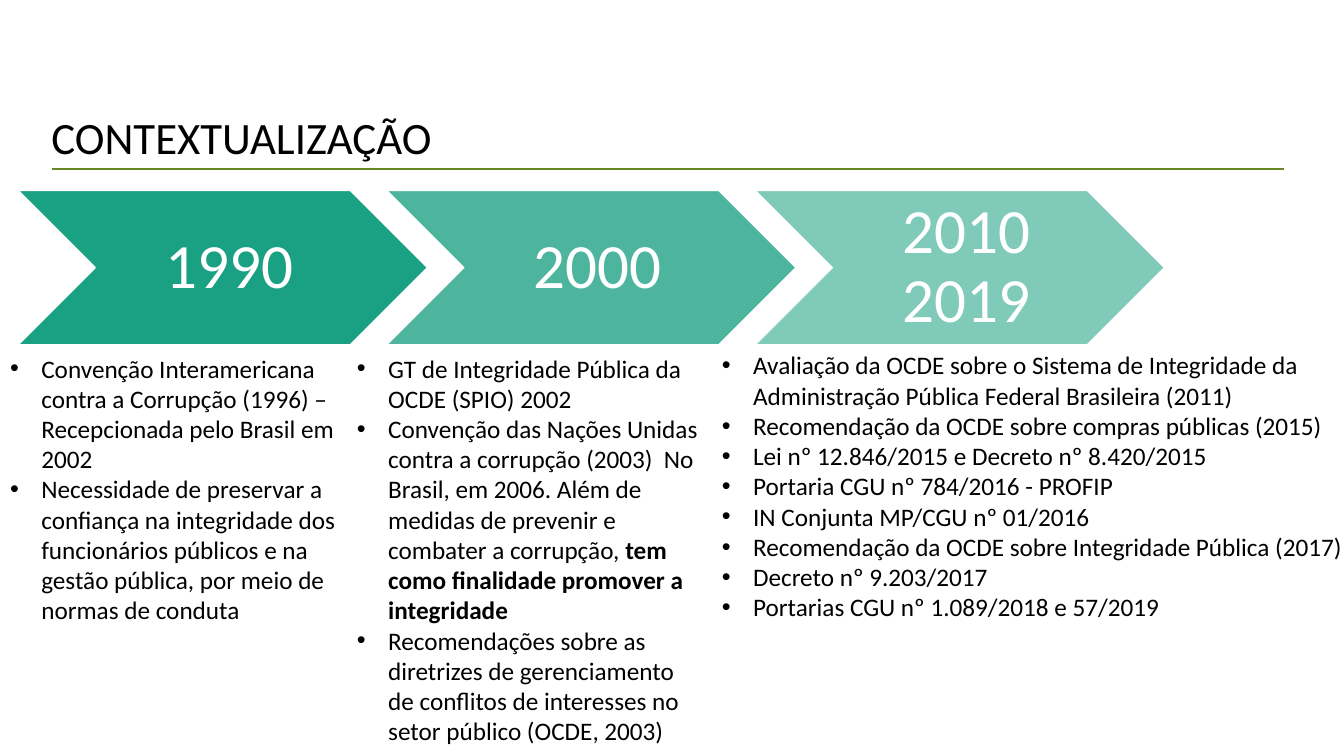
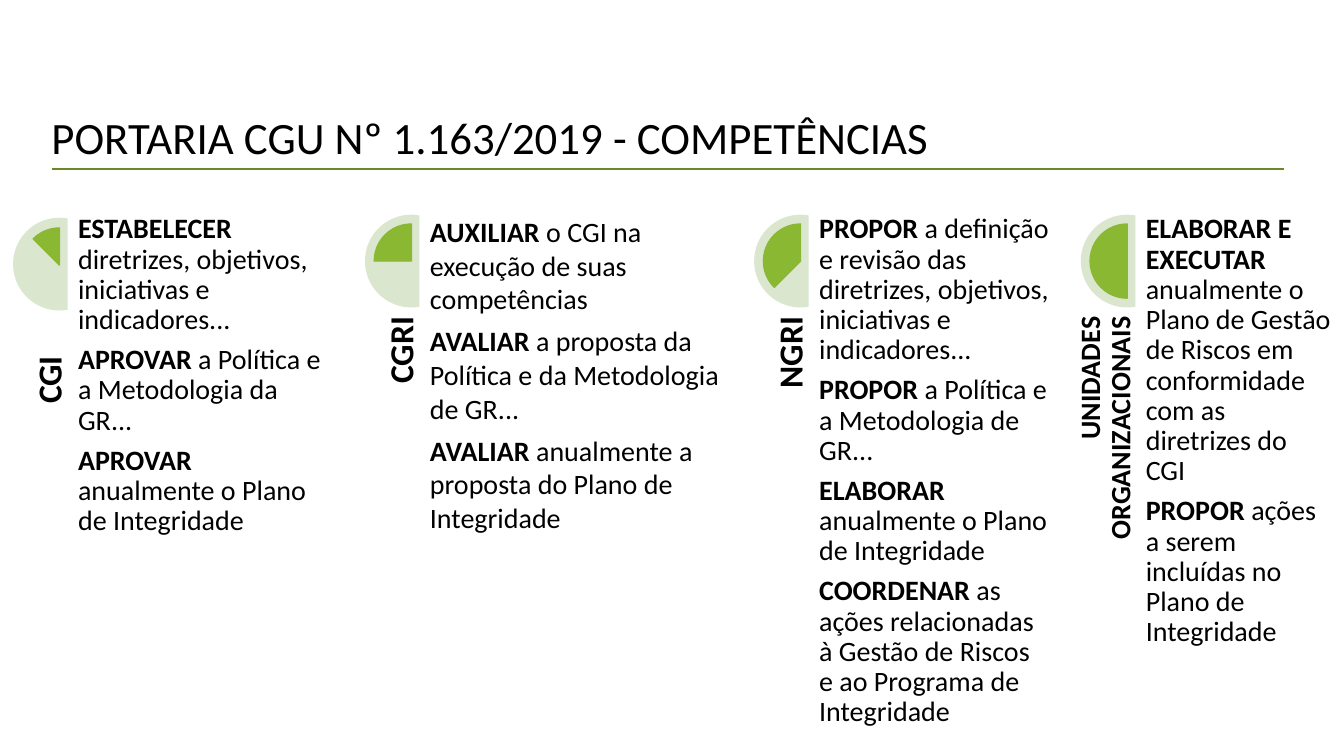
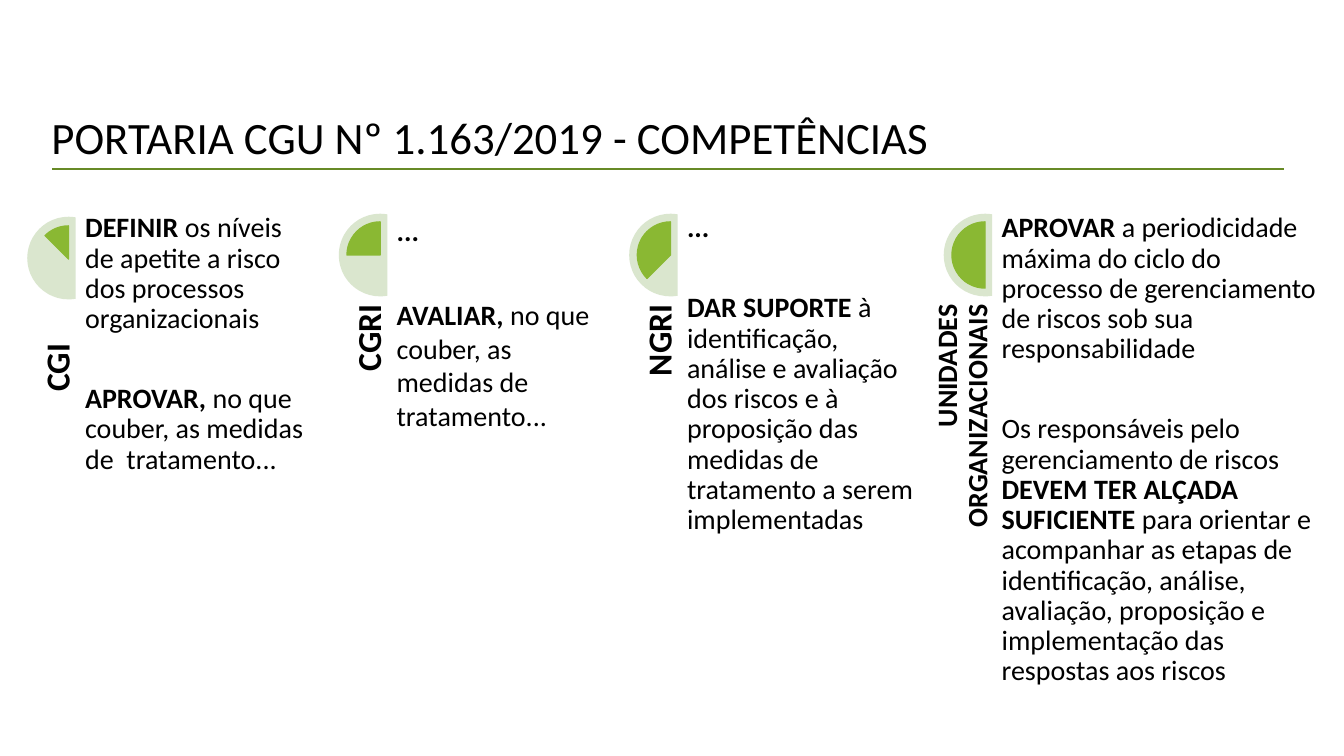
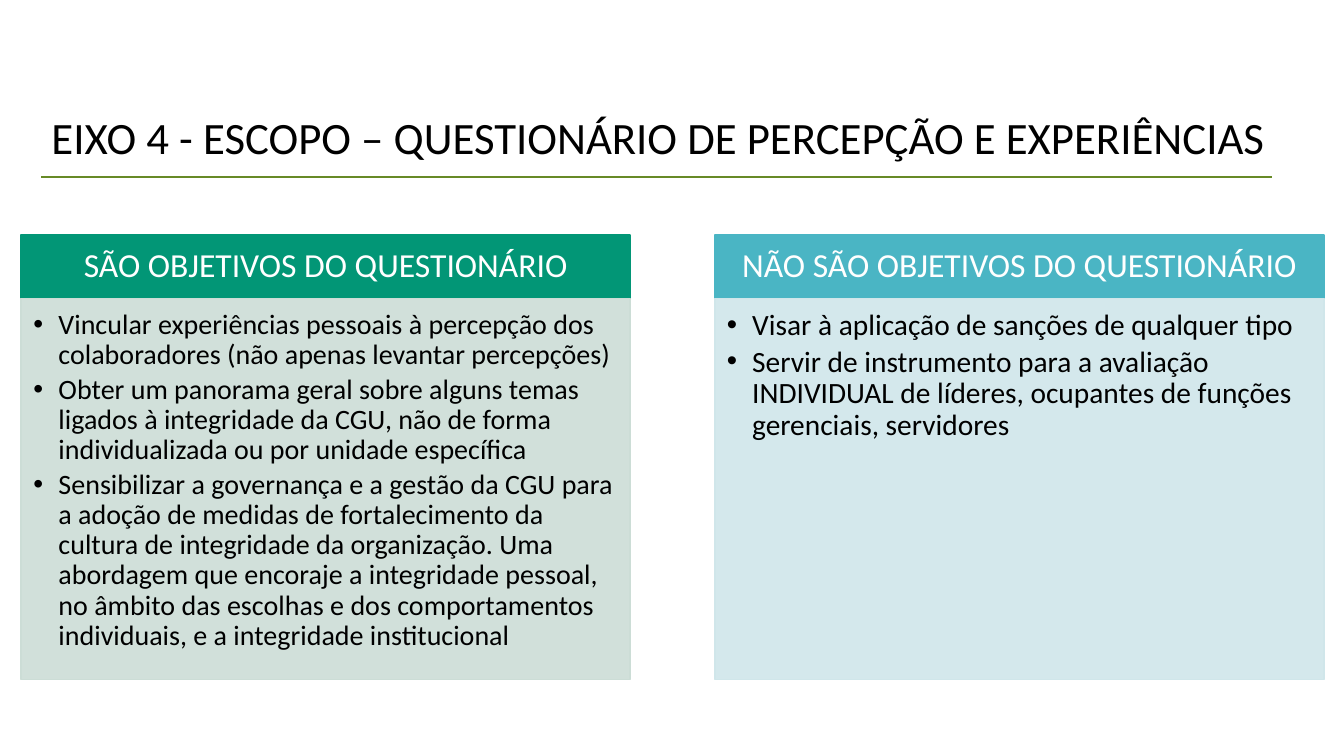
from dataclasses import dataclass
from typing import Any

from lxml import etree
from pptx import Presentation
from pptx.dml.color import RGBColor
from pptx.enum import shapes, text
from pptx.oxml import ns
from pptx.util import Inches, Pt

BLACK = RGBColor(0x00, 0x00, 0x00)
WHITE = RGBColor(0xFF, 0xFF, 0xFF)
OLIVE = RGBColor(0x67, 0x8A, 0x26)
GREEN = RGBColor(0x8A, 0xB8, 0x33)
PALE = RGBColor(0xDA, 0xE6, 0xCE)
TEAL = RGBColor(0x02, 0x96, 0x76)
MINT = RGBColor(0xCC, 0xDD, 0xD6)
BLUE = RGBColor(0x4A, 0xB5, 0xC4)
ICE = RGBColor(0xD0, 0xE6, 0xEA)
FONT = "Calibri"
LEFT, CENTER, RIGHT = text.PP_ALIGN.LEFT, text.PP_ALIGN.CENTER, text.PP_ALIGN.RIGHT
TOP, MIDDLE, BOTTOM = text.MSO_ANCHOR.TOP, text.MSO_ANCHOR.MIDDLE, text.MSO_ANCHOR.BOTTOM
KIND = shapes.MSO_SHAPE


@dataclass(frozen=True)
class Box:
    x: float
    y: float
    w: float
    h: float

    def emu(self) -> list[int]:
        return [Inches(side) for side in (self.x, self.y, self.w, self.h)]


@dataclass(frozen=True)
class Style:
    size: float
    color: RGBColor = BLACK
    align: Any = LEFT
    anchor: Any = TOP
    lead: float = 0.9
    gap: float = 0
    bullet: float = 0
    inset: tuple[float, ...] = (0, 0, 0, 0)


@dataclass(frozen=True)
class Era:
    year: str
    alpha: int
    box: Box
    right: float
    items: tuple[str, ...]


@dataclass(frozen=True)
class Role:
    name: str
    x: float
    width: float
    items: tuple[str, ...]
    size: float = 24
    lead: float = 0.9
    gap: float = 7
    drop: bool = False


@dataclass(frozen=True)
class Panel:
    head: str
    x: float
    dark: RGBColor
    light: RGBColor
    size: float
    items: tuple[str, ...]


TITLE = Style(32, lead=1, inset=(0.1, 0.05, 0.1, 0.05))
YEAR = Style(45, WHITE, CENTER, MIDDLE, inset=(0.2, 0.07, 0.07, 0.07))
HEAD = Style(24, WHITE, CENTER, MIDDLE, inset=(0.19, 0.11, 0.19, 0.11))

ERAS = (
    Era("1990", 90, Box(0, 3.45, 3.61, 2.83), 0.1, (
        "Convenção Interamericana contra a Corrupção (1996) – Recepcionada pelo Brasil em 2002",
        "Necessidade de preservar a confiança na integridade dos funcionários públicos e na "
        "gestão pública, por meio de normas de conduta")),
    Era("2000", 70, Box(3.44, 3.45, 3.61, 4.05), 0.1, (
        "GT de Integridade Pública da OCDE (SPIO) 2002",
        "Convenção das Nações Unidas contra a corrupção (2003)  No Brasil, em 2006. Além de "
        "medidas de prevenir e combater a corrupção, *tem como finalidade promover a integridade",
        "Recomendações sobre as diretrizes de gerenciamento de conflitos de interesses no "
        "setor público (OCDE, 2003)")),
    Era("2010 2019", 50, Box(7.06, 3.42, 6.27, 2.83), 0, (
        "Avaliação da OCDE sobre o Sistema de Integridade da Administração Pública Federal "
        "Brasileira (2011)",
        "Recomendação da OCDE sobre compras públicas (2015)",
        "Lei nº 12.846/2015 e Decreto nº 8.420/2015",
        "Portaria CGU nº 784/2016 - PROFIP",
        "IN Conjunta MP/CGU nº 01/2016",
        "Recomendação da OCDE sobre Integridade Pública (2017)",
        "Decreto nº 9.203/2017",
        "Portarias CGU nº 1.089/2018 e 57/2019")),
)

DUTIES = (
    Role("CGI", 0.13, 2.53, (
        "*ESTABELECER *diretrizes, objetivos, iniciativas e indicadores...",
        "*APROVAR* a Política e a Metodologia da GR...",
        "*APROVAR* anualmente o Plano de Integridade"), drop=True),
    Role("CGRI", 3.62, 2.9, (
        "*AUXILIAR* o CGI na execução de suas competências",
        "*AVALIAR *a proposta da Política e da Metodologia de GR...",
        "*AVALIAR* anualmente a proposta do Plano de Integridade"), lead=1, gap=6),
    Role("NGRI", 7.48, 2.28, (
        "*PROPOR *a definição e revisão das diretrizes, objetivos, iniciativas e indicadores...",
        "*PROPOR* a Política e a Metodologia de GR...",
        "*ELABORAR* anualmente o Plano de Integridade",
        "*COORDENAR* as ações relacionadas à Gestão de Riscos e ao Programa de Integridade")),
    Role("UNIDADES ORGANIZACIONAIS", 10.72, 1.84, (
        "*ELABORAR E EXECUTAR *anualmente o Plano de Gestão de Riscos em conformidade com as "
        "diretrizes do CGI",
        "*PROPOR *ações a serem incluídas no Plano de Integridade"), size=20),
)

RISKS = (
    Role("CGI", 0.27, 2.25, (
        "*DEFINIR* os níveis de apetite a risco dos processos organizacionais",
        "*APROVAR, *no que couber, as medidas de  tratamento..."), gap=35.6, drop=True),
    Role("CGRI", 3.36, 2.03, (
        "*...",
        "*AVALIAR, *no que couber, as medidas de tratamento..."), lead=1, gap=36),
    Role("NGRI", 6.24, 2.28, (
        "*...",
        "*DAR SUPORTE *à identificação, análise e avaliação dos riscos e à proposição das "
        "medidas de tratamento a serem implementadas"), gap=35.6),
    Role("UNIDADES ORGANIZACIONAIS", 9.36, 3.13, (
        "*APROVAR *a periodicidade máxima do ciclo do processo de gerenciamento de riscos sob "
        "sua responsabilidade",
        "Os responsáveis pelo gerenciamento de riscos *DEVEM TER ALÇADA SUFICIENTE *para "
        "orientar e acompanhar as etapas de identificação, análise, avaliação, proposição e "
        "implementação das respostas aos riscos"), size=20, gap=35.6),
)

PANELS = (
    Panel("SÃO OBJETIVOS DO QUESTIONÁRIO", 0.21, TEAL, MINT, 20, (
        "Vincular experiências pessoais à percepção dos colaboradores (não apenas levantar "
        "percepções)",
        "Obter um panorama geral sobre alguns temas ligados à integridade da CGU, não de forma "
        "individualizada ou por unidade específica",
        "Sensibilizar a governança e a gestão da CGU para a adoção de medidas de "
        "fortalecimento da cultura de integridade da organização. Uma abordagem que encoraje a "
        "integridade pessoal, no âmbito das escolhas e dos comportamentos individuais, e a "
        "integridade institucional")),
    Panel("NÃO SÃO OBJETIVOS DO QUESTIONÁRIO", 7.09, BLUE, ICE, 21, (
        "Visar à aplicação de sanções de qualquer tipo",
        "Servir de instrumento para a avaliação INDIVIDUAL de líderes, ocupantes de funções "
        "gerenciais, servidores")),
)


def place(shape: Any, box: Box) -> None:
    shape.left, shape.top, shape.width, shape.height = box.emu()


def write(shape: Any, items: tuple[str, ...], style: Style) -> None:
    frame = shape.text_frame
    frame.word_wrap = True
    frame.auto_size = text.MSO_AUTO_SIZE.NONE
    frame.vertical_anchor = style.anchor
    (frame.margin_left, frame.margin_top,
     frame.margin_right, frame.margin_bottom) = map(Inches, style.inset)
    for n, item in enumerate(items):
        para = frame.add_paragraph() if n else frame.paragraphs[0]
        para.alignment = style.align
        para.line_spacing = style.lead
        para.space_before = Pt(style.gap if n else 0)
        para.space_after = Pt(0)
        props = para._p.get_or_add_pPr()
        props.set("marL", str(Inches(style.bullet)))
        props.set("indent", str(-Inches(style.bullet)))
        if style.bullet:
            etree.SubElement(props, ns.qn("a:buFont")).set("typeface", "Arial")
            etree.SubElement(props, ns.qn("a:buChar")).set("char", "•")
        else:
            etree.SubElement(props, ns.qn("a:buNone"))
        para.font.name = FONT
        para.font.size = Pt(style.size)
        para.font.color.rgb = style.color
        for k, part in enumerate(item.split("*")):
            if part:
                run = para.add_run()
                run.text = part
                run.font.bold = k % 2 == 1


def paint(shape: Any, fill: RGBColor, line: RGBColor | None, alpha: int = 100) -> None:
    shape.fill.solid()
    shape.fill.fore_color.rgb = fill
    if alpha < 100:
        tint = shape._element.spPr.find(ns.qn("a:solidFill"))[0]
        etree.SubElement(tint, ns.qn("a:alpha")).set("val", str(alpha * 1000))
    if line is None:
        shape.line.fill.background()
    else:
        shape.line.color.rgb = line
        shape.line.width = Pt(1)


def draw(slide: Any, kind: Any, box: Box, fill: RGBColor, line: RGBColor | None,
         alpha: int = 100) -> Any:
    shape = slide.shapes.add_shape(kind, *box.emu())
    shape.shadow.inherit = False
    paint(shape, fill, line, alpha)
    return shape


def start(deck: Any, title: str, x: float = 0.52, y: float = 1.68) -> Any:
    slide = deck.slides.add_slide(deck.slide_layouts[4])
    place(slide.shapes.title, Box(0.41, 1.04, 12.51, 0.64))
    write(slide.shapes.title, (title,), TITLE)
    rule = slide.shapes.add_connector(
        shapes.MSO_CONNECTOR.STRAIGHT, Inches(x), Inches(y), Inches(x + 12.21), Inches(y))
    rule.line.color.rgb = OLIVE
    rule.line.width = Pt(1.5)
    etree.SubElement(rule._element.spPr, ns.qn("a:effectLst"))
    return slide


def fill(slide: Any, idx: int, box: Box, items: tuple[str, ...], style: Style) -> Any:
    body = slide.placeholders[idx]
    place(body, box)
    write(body, items, style)
    return body


def prune(slide: Any) -> None:
    for body in list(slide.placeholders):
        if not body.text_frame.text:
            body._element.getparent().remove(body._element)


def history(deck: Any) -> None:
    slide = start(deck, "CONTEXTUALIZAÇÃO")
    for n, era in enumerate(ERAS):
        arrow = draw(slide, KIND.CHEVRON, Box(0.18 + 3.655 * n, 1.89, 4.06, 1.53),
                     TEAL, WHITE, era.alpha)
        write(arrow, (era.year,), YEAR)
        style = Style(18, lead=1, bullet=0.31, inset=(0.1, 0.05, era.right, 0.05))
        fill(slide, n + 1, era.box, era.items, style)
    prune(slide)


def powers(deck: Any, roles: tuple[Role, ...], top: float, size: float) -> None:
    slide = start(deck, "PORTARIA CGU Nº 1.163/2019 - COMPETÊNCIAS")
    for n, role in enumerate(roles):
        x = role.x
        chord = draw(slide, KIND.CHORD,
                     Box(x, top + 0.03 * role.drop, size, size), PALE, None)
        chord.adjustments[0], chord.adjustments[1] = 48, 168
        pie = draw(slide, KIND.PIE,
                   Box(x + 0.1 * size, top + 0.1 * size + 0.04 * role.drop,
                       0.8 * size, 0.8 * size), GREEN, GREEN)
        pie.adjustments[0], pie.adjustments[1] = 135 - 27 * n, 162
        long, wide = 2.9 * size, 0.6 * size
        mid = top + 1.1 * size + long / 2
        label = slide.shapes.add_textbox(
            *Box(x + (wide - long) / 2, mid - wide / 2, long, wide).emu())
        label.rotation = 270
        write(label, ("*" + role.name,),
              Style(role.size, align=RIGHT, anchor=BOTTOM,
                    inset=(0, 0, 0.39 * role.drop, 0)))
        fill(slide, n + 1, Box(x + 0.7 * size, top, role.width, 4 * size),
             role.items, Style(20, lead=role.lead, gap=role.gap))


def scope(deck: Any) -> None:
    slide = start(deck, "EIXO 4 - ESCOPO – QUESTIONÁRIO DE PERCEPÇÃO E EXPERIÊNCIAS", 0.41, 1.76)
    for n, panel in enumerate(PANELS):
        head = fill(slide, 2 * n + 1, Box(panel.x, 2.33, 6.04, 0.63), (panel.head,), HEAD)
        paint(head, panel.dark, panel.dark)
        style = Style(panel.size, gap=0.15 * panel.size, bullet=0.25,
                      inset=(0.12, 0.12, 0.16, 0.17))
        body = fill(slide, 2 * n + 2, Box(panel.x, 2.96, 6.04, 3.78), panel.items, style)
        paint(body, panel.light, panel.light, 90)


def main() -> None:
    deck = Presentation()
    deck.slide_width, deck.slide_height = Inches(13.33), Inches(7.5)
    history(deck)
    powers(deck, DUTIES, 2.13, 0.92)
    powers(deck, RISKS, 2.12, 0.82)
    scope(deck)
    deck.save("out.pptx")


if __name__ == "__main__":
    main()
